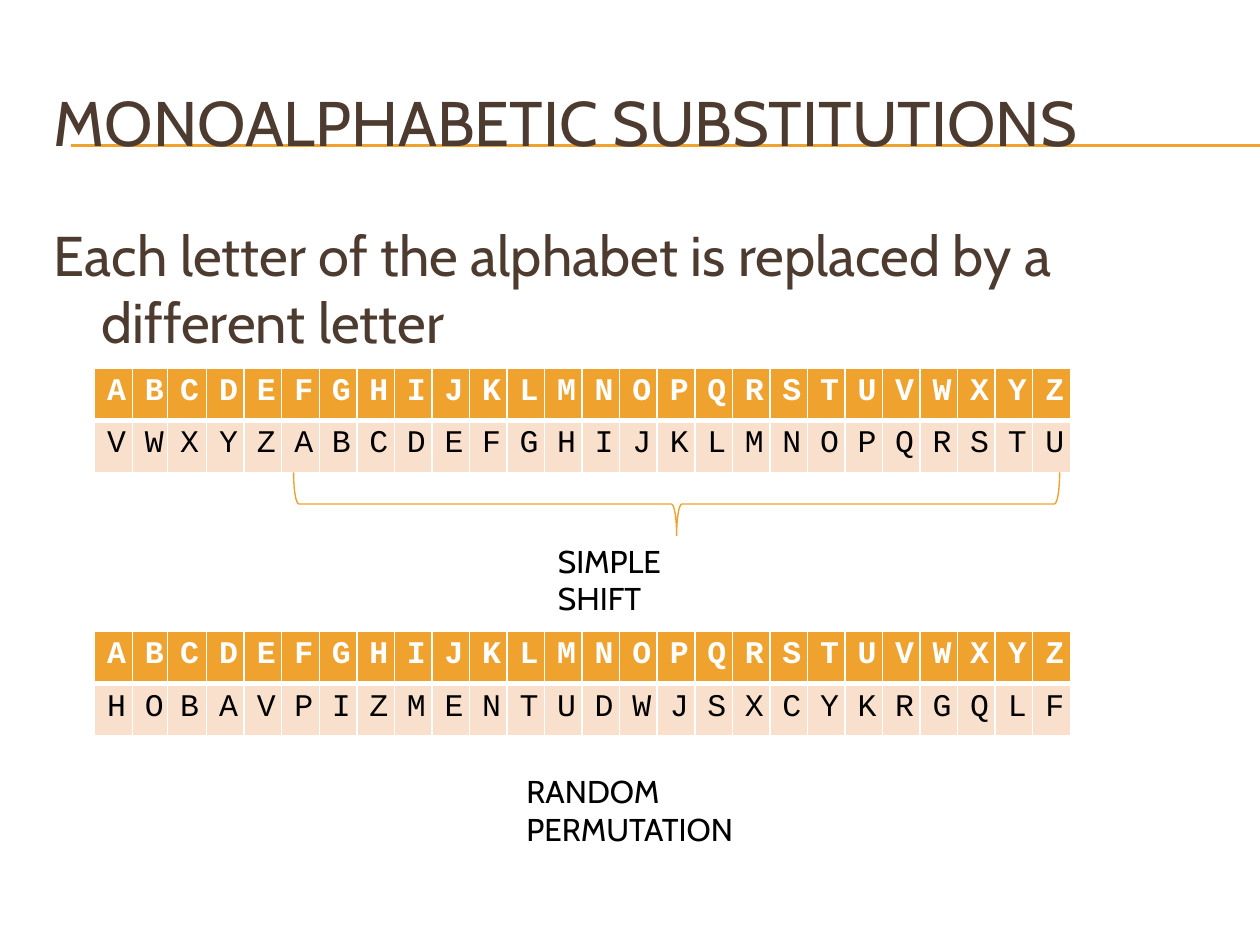
from lxml import etree
from pptx import Presentation
from pptx.dml.color import RGBColor
from pptx.enum.shapes import MSO_CONNECTOR, MSO_SHAPE
from pptx.enum.text import MSO_ANCHOR, MSO_AUTO_SIZE
from pptx.oxml.ns import qn
from pptx.util import Inches, Pt

STRAIGHT = MSO_CONNECTOR.STRAIGHT
BRACE = MSO_SHAPE.RIGHT_BRACE
TOP, MIDDLE = MSO_ANCHOR.TOP, MSO_ANCHOR.MIDDLE
GROW = MSO_AUTO_SIZE.SHAPE_TO_FIT_TEXT

COLORS = {
    "accent": "F0A22E",
    "pale": "F9E0CD",
    "brown": "4E3B30",
    "black": "000000",
    "white": "FFFFFF",
}
TITLE = {"size": Pt(36), "name": "Cabin"}
BODY = {"size": Pt(32), "name": "Cabin"}
LABEL = {"size": Pt(18), "name": "Cabin"}
PLAIN = {"size": Pt(18), "name": "Courier New", "bold": False}
HEADER = {**PLAIN, "bold": True}

ALPHABET = "ABCDEFGHIJKLMNOPQRSTUVWXYZ"
SHIFTED = ALPHABET[-5:] + ALPHABET[:-5]
PERMUTED = "HOBAVPIZMENTUDWJSXCYKRGQLF"
TABLE_WIDTH = 7.75
FIRST_WIDTHS = [0.3, 0.28, 0.31]


def rgb(color):
    return RGBColor.from_string(COLORS[color])


def add_run(p, text, fmt, color):
    r = p.add_run()
    r.text = text
    for key, value in fmt.items():
        setattr(r.font, key, value)
    r.font.color.rgb = rgb(color)


def add_text(s, box, text, fmt, color, anchor=TOP):
    sp = s.shapes.add_textbox(*map(Inches, box))
    tf = sp.text_frame
    tf.word_wrap = True
    tf.vertical_anchor = anchor
    add_run(tf.paragraphs[0], text, fmt, color)
    return sp


def add_body(s, box, text):
    p = add_text(s, box, text, BODY, "brown").text_frame.paragraphs[0]
    p.space_before = Pt(6.4)
    pPr = p._p.get_or_add_pPr()
    pPr.set("marL", str(Inches(0.38)))
    pPr.set("indent", str(-Inches(0.38)))


def add_label(s, box, text):
    sp = add_text(s, box, text, LABEL, "black")
    sp.text_frame.auto_size = GROW


def add_rule(s, y):
    line = s.shapes.add_connector(
        STRAIGHT, Inches(0.56), Inches(y), Inches(10), Inches(y))
    line.line.color.rgb = rgb("accent")
    line.line.width = Pt(0.75)
    etree.SubElement(line._element.spPr, qn("a:effectLst"))


def add_brace(s, box):
    sp = s.shapes.add_shape(BRACE, *map(Inches, box))
    sp.rotation = 90
    sp.shadow.inherit = False
    sp.fill.background()
    sp.line.color.rgb = rgb("accent")
    sp.line.width = Pt(0.79)


def set_borders(cell, widths):
    tcPr = cell._tc.get_or_add_tcPr()
    for side, width in zip("LRTB", widths):
        ln = etree.SubElement(tcPr, qn(f"a:ln{side}"), w=str(Pt(width)))
        fill = etree.SubElement(ln, qn("a:solidFill"))
        etree.SubElement(fill, qn("a:srgbClr"), val=COLORS["white"])


def add_cipher_table(s, top, cipher):
    count = len(ALPHABET)
    table = s.shapes.add_table(
        2, count, Inches(0.75), Inches(top),
        Inches(TABLE_WIDTH), Inches(0.83)).table
    rest = count - len(FIRST_WIDTHS)
    width = (TABLE_WIDTH - sum(FIRST_WIDTHS)) / rest
    for column, w in zip(table.columns, FIRST_WIDTHS + [width] * rest):
        column.width = Inches(w)
    rows = [
        (ALPHABET, HEADER, "white", "accent", (1, 1, 1, 3)),
        (cipher, PLAIN, "black", "pale", (1, 1, 3, 1)),
    ]
    for i, (letters, fmt, color, fill, borders) in enumerate(rows):
        for j, letter in enumerate(letters):
            cell = table.cell(i, j)
            set_borders(cell, borders)
            cell.fill.solid()
            cell.fill.fore_color.rgb = rgb(fill)
            add_run(cell.text_frame.paragraphs[0], letter, fmt, color)


def main():
    prs = Presentation()
    prs.slide_width, prs.slide_height = Inches(10), Inches(7.5)
    s = prs.slides.add_slide(prs.slide_layouts[6])
    for y in (1.15, 1.16):
        add_rule(s, y)
    add_text(s, (0.33, 0.5, 9.5, 0.92), "MONOALPHABETIC SUBSTITUTIONS",
             TITLE, "brown", MIDDLE)
    add_body(s, (0.33, 1.7, 9.5, 4.95),
             "Each letter of the alphabet is replaced by a different letter")
    add_cipher_table(s, 2.92, SHIFTED)
    add_brace(s, (5.12, 0.96, 0.5, 6.08))
    add_label(s, (4.33, 4.25, 1.7, 0.4), "SIMPLE SHIFT")
    add_cipher_table(s, 5.01, PERMUTED)
    add_label(s, (4.08, 6.08, 2.78, 0.4), "RANDOM PERMUTATION")
    prs.save("out.pptx")


if __name__ == "__main__":
    main()
